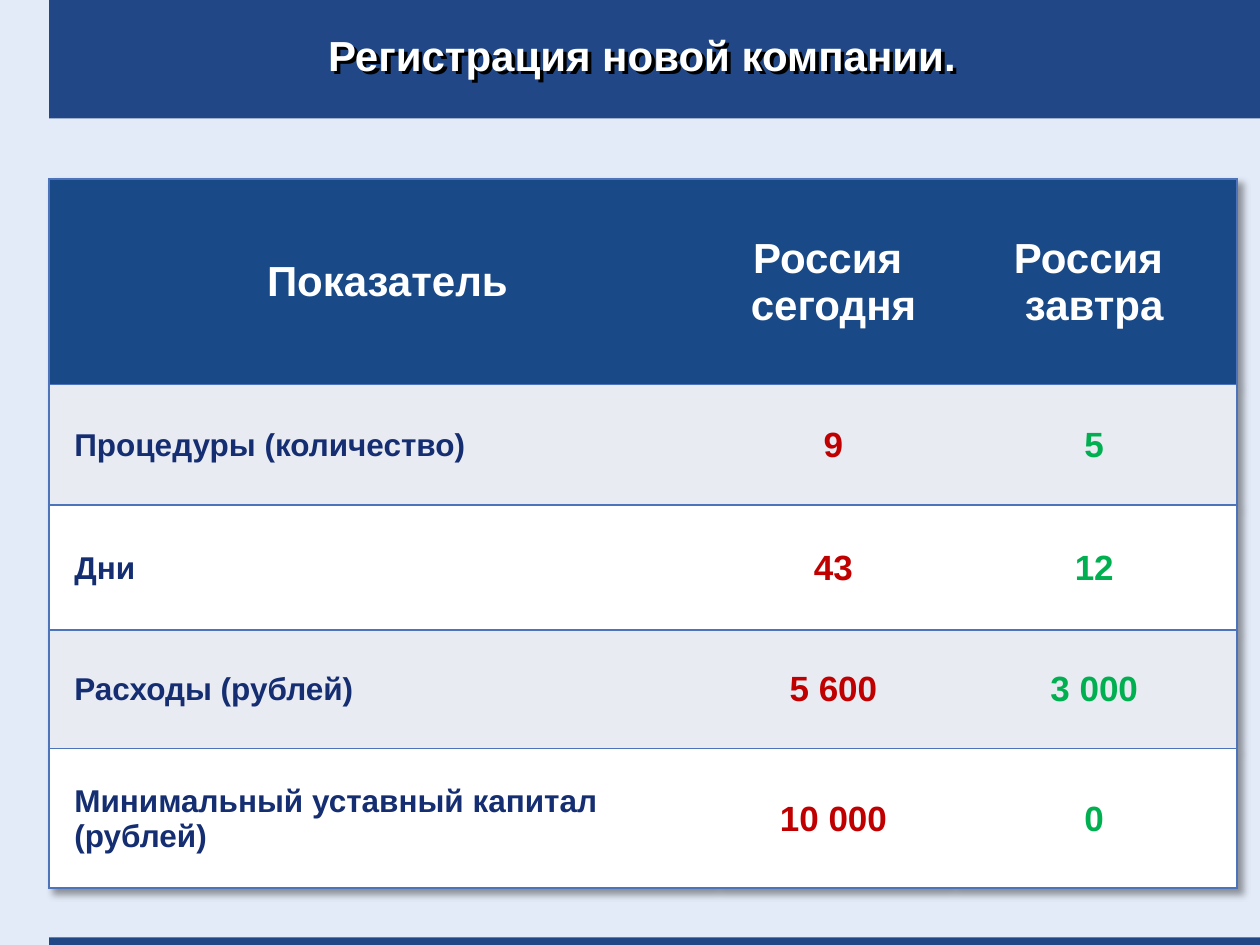
from lxml import etree
from pptx import Presentation
from pptx.dml.color import RGBColor
from pptx.enum.shapes import MSO_SHAPE
from pptx.enum.text import MSO_ANCHOR, PP_ALIGN
from pptx.oxml.ns import qn
from pptx.util import Inches, Pt

RECTANGLE = MSO_SHAPE.RECTANGLE
MIDDLE = MSO_ANCHOR.MIDDLE
LEFT, CENTER = PP_ALIGN.LEFT, PP_ALIGN.CENTER

COLORS = {
    "background": "E3EBF8", "bar": "214786", "header": "194986",
    "band": "E9EBF3", "white": "FFFFFF", "border": "4D74BB",
    "label": "142E71", "today": "C00000", "tomorrow": "00B050",
    "shadow": "000000",
}
FONT = "Arial"
WIDTH, HEIGHT = 10, 7.5
MARGIN = 0.39
BAR_HEIGHT = 0.94
PLAIN_TABLE_STYLE = "{2D5ABB26-0587-4C30-8999-92F81FD0307C}"

COLUMNS = [5.29, 1.87, 2.27]
ROWS = [1.63, 0.96, 0.99, 0.94, 1.11]
HEADER = ["Показатель", "Россия \nсегодня", "Россия \nзавтра"]
INDICATORS = [
    ["Процедуры (количество)", "9", "5"],
    ["Дни", "43", "12"],
    ["Расходы (рублей)", "5 600", "3 000"],
    ["Минимальный уставный капитал (рублей)", "10 000", "0"],
]


def color(name):
    return RGBColor.from_string(COLORS[name])


def add_color(parent, name):
    return etree.SubElement(parent, qn("a:srgbClr"), val=COLORS[name])


def make_shadow(blur, distance, opacity):
    """Effect list with one shadow falling to the lower right."""
    effects = etree.Element(qn("a:effectLst"))
    shadow = etree.SubElement(
        effects, qn("a:outerShdw"), blurRad=str(Pt(blur)),
        dist=str(Pt(distance)), dir="2700000", algn="tl", rotWithShape="0")
    etree.SubElement(add_color(shadow, "shadow"), qn("a:alpha"),
                     val=str(opacity * 1000))
    return effects


def write_text(frame, text, size, ink, align=CENTER, indent=0, spacing=None):
    """Fill a text frame, one paragraph for each line of text."""
    frame.word_wrap = True
    for number, line in enumerate(text.split("\n")):
        paragraph = frame.paragraphs[0] if number == 0 else frame.add_paragraph()
        paragraph.alignment = align
        if spacing:
            paragraph.line_spacing = spacing
        if indent:
            paragraph._p.get_or_add_pPr().set("marL", str(Inches(indent)))
        run = paragraph.add_run()
        run.text = line
        run.font.name, run.font.size, run.font.bold = FONT, Pt(size), True
        run.font.color.rgb = color(ink)


def add_bar(slide, left, top, width, height):
    bar = slide.shapes.add_shape(
        RECTANGLE, Inches(left), Inches(top), Inches(width), Inches(height))
    bar.shadow.inherit = False
    bar.fill.solid()
    bar.fill.fore_color.rgb = color("bar")
    bar.line.fill.background()


def add_title(slide, text, left, top, width, height):
    box = slide.shapes.add_textbox(
        Inches(left), Inches(top), Inches(width), Inches(height))
    frame = box.text_frame
    frame.vertical_anchor = MIDDLE
    frame.margin_left = Inches(0.2)
    frame.margin_right = frame.margin_top = frame.margin_bottom = 0
    write_text(frame, text, 24, "white", spacing=0.8)
    box._element.spPr.append(make_shadow(0, 3, 100))


def style_cell(cell, fill, edges):
    cell.vertical_anchor = MIDDLE
    cell.margin_left = cell.margin_right = cell.margin_top = Inches(0.01)
    cell.margin_bottom = 0
    cell.fill.solid()
    cell.fill.fore_color.rgb = color(fill)
    properties = cell._tc.get_or_add_tcPr()
    for position, edge in enumerate(edges):
        line = etree.Element(qn("a:ln" + edge), w=str(Pt(1)))
        add_color(etree.SubElement(line, qn("a:solidFill")), "border")
        properties.insert(position, line)


def add_indicator_table(slide, left, top, columns, rows):
    table = slide.shapes.add_table(
        len(rows), len(columns), Inches(left), Inches(top),
        Inches(sum(columns)), Inches(sum(rows))).table
    table.horz_banding = False
    properties = table._tbl.tblPr
    properties.find(qn("a:tableStyleId")).text = PLAIN_TABLE_STYLE
    properties.insert(0, make_shadow(4, 4, 40))
    for column, width in zip(table.columns, columns):
        column.width = Inches(width)
    for row, height in zip(table.rows, rows):
        row.height = Inches(height)

    outer_edges = [["L", "T", "B"], ["T", "B"], ["R", "T", "B"]]
    formats = [
        {"size": 18, "ink": "label", "align": LEFT, "indent": 0.19},
        {"size": 20, "ink": "today"},
        {"size": 20, "ink": "tomorrow"},
    ]
    for r, texts in enumerate([HEADER] + INDICATORS):
        fill = "header" if r == 0 else ("band" if r % 2 else "white")
        for c, text in enumerate(texts):
            cell = table.cell(r, c)
            style_cell(cell, fill, outer_edges[c])
            if r == 0:
                write_text(cell.text_frame, text, 24, "white",
                           indent=0 if c else 0.08)
            else:
                write_text(cell.text_frame, text, **formats[c])


def main():
    presentation = Presentation()
    presentation.slide_width = Inches(WIDTH)
    presentation.slide_height = Inches(HEIGHT)
    slide = presentation.slides.add_slide(presentation.slide_layouts[6])
    slide.background.fill.solid()
    slide.background.fill.fore_color.rgb = color("background")

    # Bars along the top and bottom edges
    add_bar(slide, MARGIN, 0, WIDTH - MARGIN, BAR_HEIGHT)
    add_bar(slide, MARGIN, 7.44, WIDTH - MARGIN, HEIGHT - 7.44)

    # Indicators today and tomorrow
    add_indicator_table(slide, MARGIN, 1.42, COLUMNS, ROWS)

    # Title over the top bar
    add_title(slide, "Регистрация новой компании.",
              MARGIN, 0, 9.21, BAR_HEIGHT)
    presentation.save("out.pptx")


if __name__ == "__main__":
    main()
